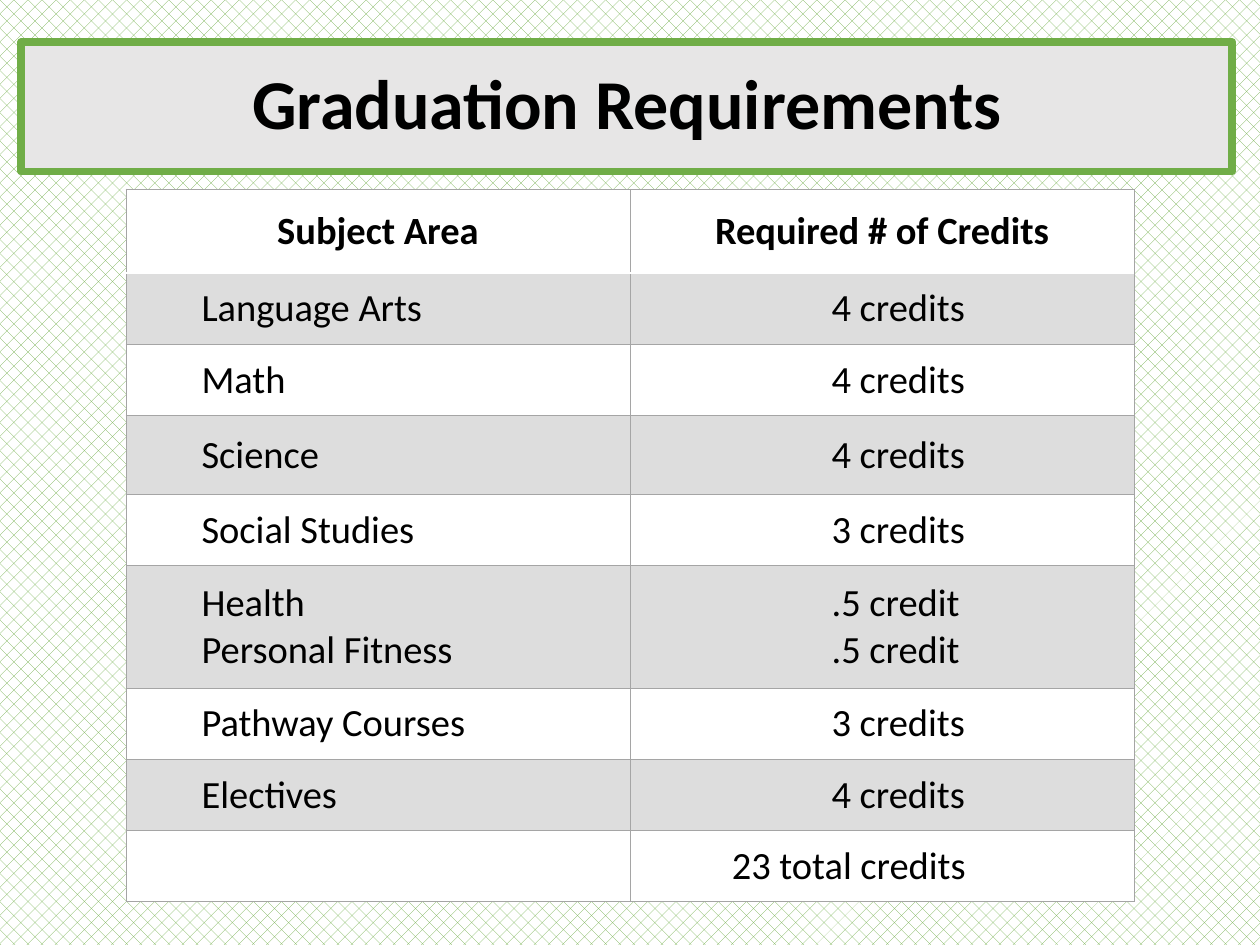
"""Build the graduation requirements slide: a title bar above a credit table."""
from lxml.etree import SubElement
from pptx import Presentation
from pptx.dml.color import RGBColor
from pptx.enum.dml import MSO_PATTERN
from pptx.enum.shapes import MSO_SHAPE
from pptx.enum.text import MSO_ANCHOR, PP_ALIGN
from pptx.oxml.ns import qn
from pptx.util import Pt

GREEN = RGBColor(0x70, 0xAD, 0x47)
TITLE_GREY = RGBColor(0xE7, 0xE6, 0xE6)
BAND_GREY = RGBColor(0xDD, 0xDD, 0xDD)
BORDER_GREY = RGBColor(0xA5, 0xA5, 0xA5)
WHITE = RGBColor(0xFF, 0xFF, 0xFF)
BLACK = RGBColor(0x00, 0x00, 0x00)

FONT = "Calibri"
SUBJECT_INDENT = 36
CREDIT_INDENT = 108
TOTAL_INDENT = 51
COLUMN_WIDTH = 288
ROW_HEIGHT = 40.75
HEADER_HEIGHT = 48

HEADINGS = ("Subject Area", "Required # of Credits")
REQUIREMENTS = [
    ("Language Arts", "4 credits", ROW_HEIGHT),
    ("Math", "4 credits", ROW_HEIGHT),
    ("Science", "4 credits", 45),
    ("Social Studies", "3 credits", ROW_HEIGHT),
    ("Health\nPersonal Fitness", ".5 credit\n.5 credit", 70),
    ("Pathway Courses", "3 credits", ROW_HEIGHT),
    ("Electives", "4 credits", ROW_HEIGHT),
    ("", "23 total credits", ROW_HEIGHT),
]


def set_background(slide):
    fill = slide.background.fill
    fill.patterned()
    fill.pattern = MSO_PATTERN.PERCENT_25
    fill.fore_color.rgb = GREEN
    fill.back_color.rgb = WHITE


def format_paragraph(paragraph, size, bold=False, alignment=None):
    paragraph.alignment = alignment
    font = paragraph.font
    for target in [font] + [run.font for run in paragraph.runs]:
        target.name = FONT
        target.size = Pt(size)
        target.bold = bold
        target.color.rgb = BLACK


def add_title(slide, text):
    shape = slide.shapes.add_shape(
        MSO_SHAPE.ROUNDED_RECTANGLE, Pt(12.25), Pt(24), Pt(692), Pt(74))
    shape.adjustments[0] = 0
    shape.shadow.inherit = False
    shape.fill.solid()
    shape.fill.fore_color.rgb = TITLE_GREY
    shape.line.color.rgb = GREEN
    shape.line.width = Pt(4.5)
    text_frame = shape.text_frame
    text_frame.text = text
    text_frame.word_wrap = True
    text_frame.vertical_anchor = MSO_ANCHOR.MIDDLE
    paragraph = text_frame.paragraphs[0]
    paragraph.line_spacing = 0.9
    format_paragraph(paragraph, 40, True, PP_ALIGN.CENTER)


def add_border(cell, side, color, width):
    properties = cell._tc.get_or_add_tcPr()
    line = SubElement(properties, qn(f"a:ln{side}"), w=str(Pt(width)))
    fill = SubElement(line, qn("a:solidFill"))
    SubElement(fill, qn("a:srgbClr"), val=str(color))


def fill_cell(cell, text, color, white_side=None, indent=0, heading=False):
    for side in "LRTB":
        if side == white_side:
            add_border(cell, side, WHITE, 1)
        else:
            add_border(cell, side, BORDER_GREY, 0.5)
    cell.fill.solid()
    cell.fill.fore_color.rgb = color
    cell.vertical_anchor = MSO_ANCHOR.MIDDLE
    cell.text_frame.text = text
    for paragraph in cell.text_frame.paragraphs:
        format_paragraph(paragraph, 22, heading,
                         PP_ALIGN.CENTER if heading else PP_ALIGN.LEFT)
        properties = paragraph._p.get_or_add_pPr()
        properties.set("marL", str(Pt(indent)))
        properties.set("indent", "0")


def add_credit_table(slide):
    heights = [HEADER_HEIGHT] + [height for _, _, height in REQUIREMENTS]
    table = slide.shapes.add_table(
        len(heights), 2, Pt(72), Pt(108),
        Pt(2 * COLUMN_WIDTH), Pt(sum(heights))).table
    table.first_row = table.horz_banding = False
    for column in table.columns:
        column.width = Pt(COLUMN_WIDTH)
    for row, height in zip(table.rows, heights):
        row.height = Pt(height)
    for index, heading in enumerate(HEADINGS):
        fill_cell(table.cell(0, index), heading, WHITE, "B", heading=True)
    for index, (subject, credits, _) in enumerate(REQUIREMENTS, start=1):
        color = BAND_GREY if index % 2 else WHITE
        white_side = "T" if index == 1 else None
        indent = CREDIT_INDENT if subject else TOTAL_INDENT
        fill_cell(table.cell(index, 0), subject, color, white_side, SUBJECT_INDENT)
        fill_cell(table.cell(index, 1), credits, color, white_side, indent)


def main():
    presentation = Presentation()
    presentation.slide_width = Pt(720)
    presentation.slide_height = Pt(540)
    slide = presentation.slides.add_slide(presentation.slide_layouts[6])
    set_background(slide)
    add_title(slide, "Graduation Requirements")
    add_credit_table(slide)
    presentation.save("out.pptx")


if __name__ == "__main__":
    main()
